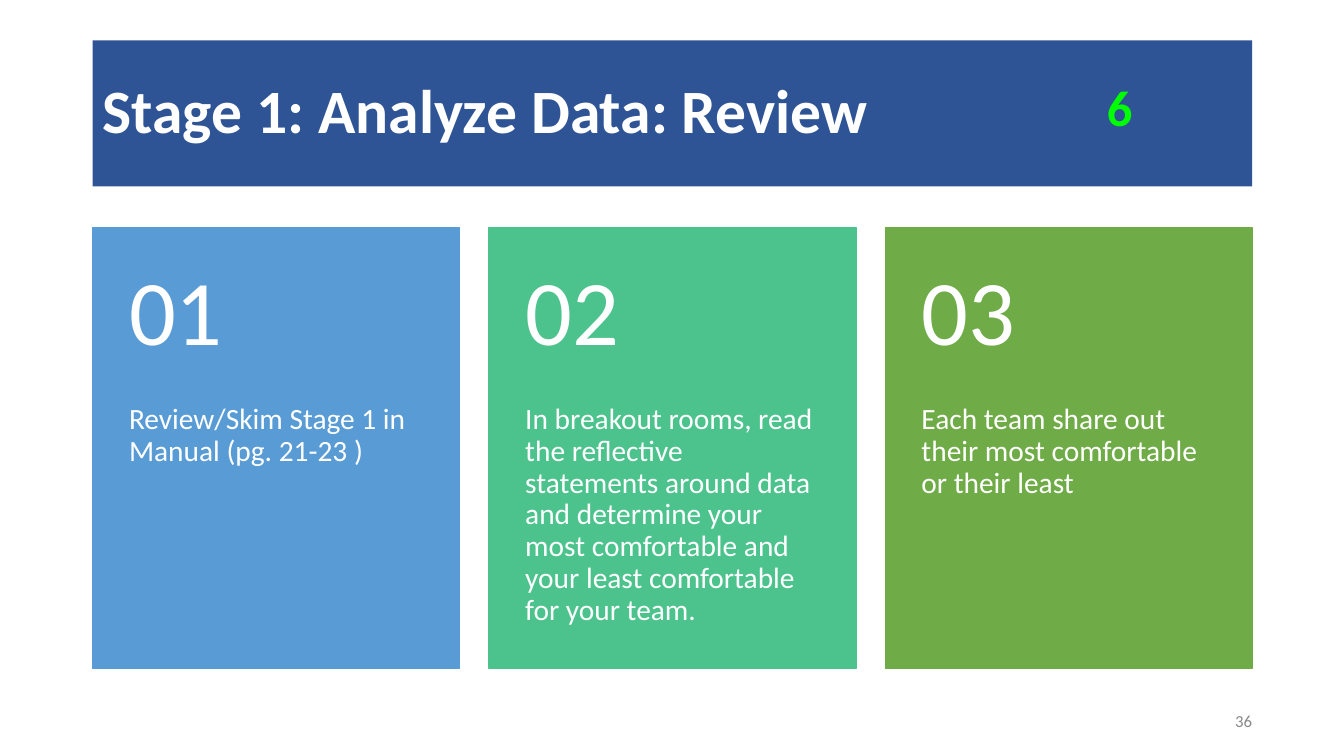
"""Build the Stage 1 data review slide with three numbered steps."""
from dataclasses import dataclass

from pptx import Presentation
from pptx.dml.color import RGBColor
from pptx.enum.shapes import MSO_SHAPE
from pptx.enum.text import MSO_ANCHOR, PP_ALIGN
from pptx.shapes.autoshape import Shape
from pptx.slide import Slide
from pptx.util import Emu, Pt

RECTANGLE = MSO_SHAPE.RECTANGLE
TOP, MIDDLE = MSO_ANCHOR.TOP, MSO_ANCHOR.MIDDLE
LEFT, RIGHT = PP_ALIGN.LEFT, PP_ALIGN.RIGHT

EMU_PER_PX = 9144
FONT = "Calibri"
COLORS = {
    "banner": "2F5496",
    "blue": "599BD5",
    "teal": "4CC38C",
    "green": "6FAB46",
    "white": "FFFFFF",
    "gray": "888888",
    "lime": "00FF00",
}

MARGIN = 92
CARD_TOP, CARD_WIDTH, CARD_HEIGHT = 226, 364, 437
CARD_PITCH = 393
NUMBER_HEIGHT = 175


@dataclass(frozen=True)
class Box:
    left: int
    top: int
    width: int
    height: int


@dataclass(frozen=True)
class TextStyle:
    size: int
    color: str = "white"
    bold: bool = False
    anchor: MSO_ANCHOR = TOP
    align: PP_ALIGN = LEFT
    line_spacing: float = 1.0
    insets: tuple[int, int, int, int] = (0, 0, 0, 0)


@dataclass(frozen=True)
class Step:
    color: str
    instruction: str


TITLE = TextStyle(44, bold=True, anchor=MIDDLE, line_spacing=0.9, insets=(10, 5, 10, 5))
BADGE = TextStyle(36, "lime", bold=True, insets=(10, 10, 10, 10))
PAGE = TextStyle(12, "gray", anchor=MIDDLE, align=RIGHT)
NUMBER = TextStyle(66, anchor=MIDDLE, line_spacing=0.9, insets=(36, 18, 36, 18))
INSTRUCTION = TextStyle(21, line_spacing=0.9, insets=(36, 0, 36, 36))

STEPS = (
    Step("blue", "Review/Skim Stage 1 in Manual (pg. 21-23 )"),
    Step(
        "teal",
        "In breakout rooms, read the reflective statements around data and "
        "determine your most comfortable and your least comfortable for your team.",
    ),
    Step("green", "Each team share out their most comfortable or their least"),
)


def px(length: int) -> Emu:
    """Convert px to EMU."""
    return Emu(length * EMU_PER_PX)


def rgb(name: str) -> RGBColor:
    """Look up a named colour."""
    return RGBColor.from_string(COLORS[name])


def place(box: Box) -> tuple[Emu, Emu, Emu, Emu]:
    """Return the box in EMU."""
    return px(box.left), px(box.top), px(box.width), px(box.height)


def write(holder: Shape, text: str, style: TextStyle) -> None:
    """Set the text of a shape and format it."""
    frame = holder.text_frame
    frame.text = text
    frame.word_wrap = True
    frame.vertical_anchor = style.anchor
    (frame.margin_left, frame.margin_top,
     frame.margin_right, frame.margin_bottom) = map(px, style.insets)
    paragraph = frame.paragraphs[0]
    paragraph.alignment = style.align
    paragraph.line_spacing = style.line_spacing
    font = paragraph.runs[0].font
    font.name = FONT
    font.size = Pt(style.size)
    font.bold = style.bold
    font.color.rgb = rgb(style.color)


def add_panel(slide: Slide, box: Box, color: str, outlined: bool) -> Shape:
    """Add a filled rectangle."""
    panel = slide.shapes.add_shape(RECTANGLE, *place(box))
    panel.shadow.inherit = False
    panel.fill.solid()
    panel.fill.fore_color.rgb = rgb(color)
    if outlined:
        panel.line.color.rgb = rgb(color)
        panel.line.width = Pt(1)
    else:
        panel.line.fill.background()
    return panel


def add_label(slide: Slide, box: Box, text: str, style: TextStyle) -> None:
    """Add a text box."""
    write(slide.shapes.add_textbox(*place(box)), text, style)


def add_step(slide: Slide, index: int, step: Step) -> None:
    """Add one numbered step card."""
    left = MARGIN + index * CARD_PITCH
    add_panel(slide, Box(left, CARD_TOP, CARD_WIDTH, CARD_HEIGHT), step.color, True)
    body = Box(left, CARD_TOP + NUMBER_HEIGHT, CARD_WIDTH, CARD_HEIGHT - NUMBER_HEIGHT)
    add_label(slide, body, step.instruction, INSTRUCTION)
    number = Box(left, CARD_TOP, CARD_WIDTH, NUMBER_HEIGHT)
    add_label(slide, number, f"{index + 1:02d}", NUMBER)


def main() -> None:
    """Assemble and save the slide."""
    deck = Presentation()
    deck.slide_width, deck.slide_height = px(1333), px(750)
    slide = deck.slides.add_slide(deck.slide_layouts[6])
    banner = add_panel(slide, Box(MARGIN, 40, 1150, 145), "banner", False)
    write(banner, "Stage 1: Analyze Data: Review", TITLE)
    add_label(slide, Box(942, 695, 300, 40), "36", PAGE)
    for index, step in enumerate(STEPS):
        add_step(slide, index, step)
    add_label(slide, Box(1088, 65, 67, 81), "6", BADGE)
    deck.save("out.pptx")


if __name__ == "__main__":
    main()
